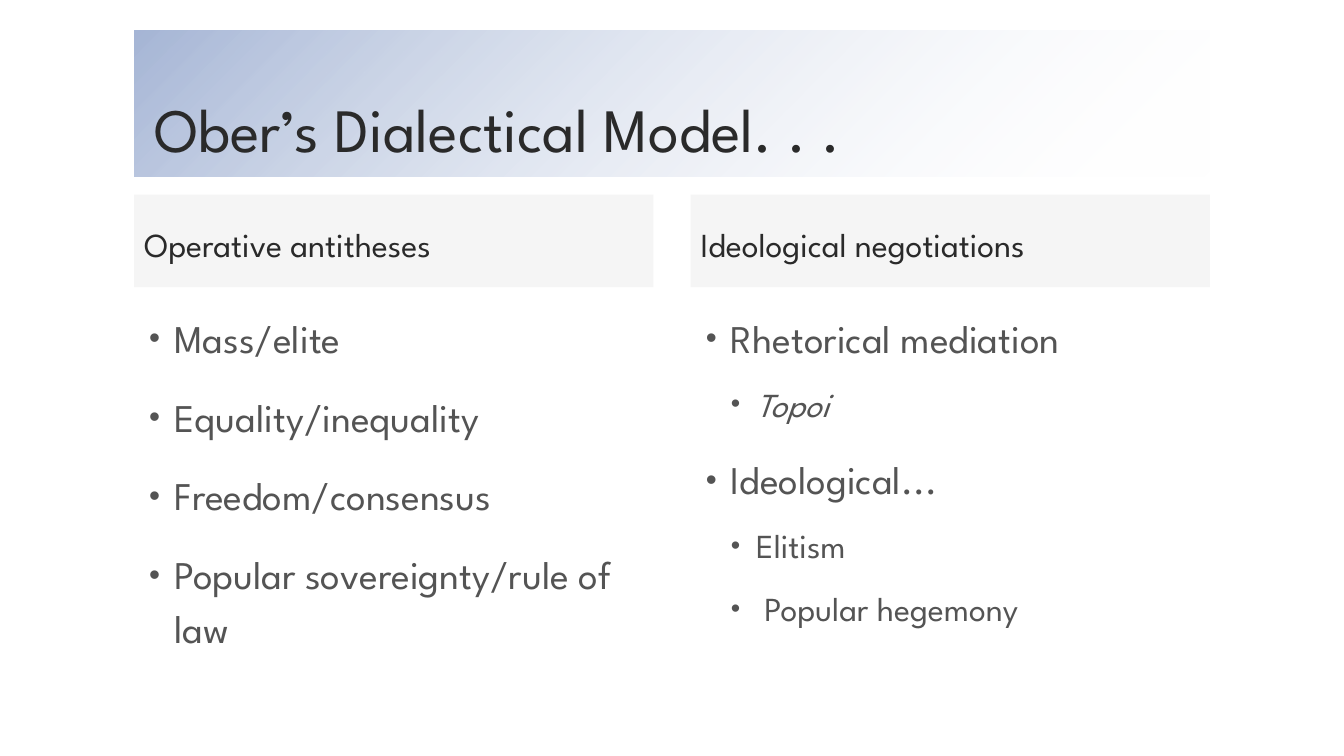
from dataclasses import dataclass

from lxml import etree
from pptx import Presentation
from pptx.dml.color import RGBColor
from pptx.enum.text import MSO_ANCHOR, MSO_AUTO_SIZE, PP_ALIGN
from pptx.oxml.ns import qn
from pptx.util import Inches, Pt

LEFT = PP_ALIGN.LEFT
TOP, MIDDLE, BOTTOM = MSO_ANCHOR.TOP, MSO_ANCHOR.MIDDLE, MSO_ANCHOR.BOTTOM
NO_AUTOFIT = MSO_AUTO_SIZE.NONE
COMPARISON_LAYOUT = 4


@dataclass(frozen=True)
class Theme:
    font: str = "League Spartan"
    heading: str = "2A2A2A"
    body: str = "545454"
    band_start: str = "A6B6D6"
    band_end: str = "FFFFFF"
    panel: str = "BFBFBF"
    panel_opacity: int = 15
    title_size: int = 44
    header_size: int = 24
    list_sizes: tuple = (28, 24)
    list_spacing: tuple = (18, 12)
    list_indents: tuple = (0.3, 0.55)
    hanging: float = 0.25
    line_spacing: float = 1.14
    title_line_spacing: float = 0.9


class Grid:
    """Two equal columns and three rows, in inches."""
    left, column_width, gutter = 1.33, 5.15, 0.37
    rows = {"title": (0.3, 1.45), "header": (1.93, 0.92), "list": (3, 3.58)}

    def box(self, row, column=0, span=1):
        top, height = self.rows[row]
        step = self.column_width + self.gutter
        left = self.left + column * step
        width = span * step - self.gutter
        return dict(zip(("left", "top", "width", "height"),
                        map(Inches, (left, top, width, height))))


def apply(target, values):
    for name, value in values.items():
        setattr(target, name, value)


def set_opacity(color_element, percent):
    alpha = etree.SubElement(color_element, qn("a:alpha"))
    alpha.set("val", str(percent * 1000))


class ComparisonSlide:
    def __init__(self, presentation, theme, grid):
        layout = presentation.slide_layouts[COMPARISON_LAYOUT]
        self.slide = presentation.slides.add_slide(layout)
        self.theme, self.grid = theme, grid

    def place(self, index, box, anchor):
        shape = self.slide.placeholders[index]
        apply(shape, box)
        apply(shape.text_frame, {"word_wrap": True, "auto_size": NO_AUTOFIT,
                                 "vertical_anchor": anchor})
        return shape

    def add_text(self, paragraph, text, size, color, line_spacing,
                 space_before=0, italic=False):
        apply(paragraph, {"alignment": LEFT, "line_spacing": line_spacing,
                          "space_before": Pt(space_before), "space_after": Pt(0)})
        run = paragraph.add_run()
        run.text = text
        apply(run.font, {"name": self.theme.font, "size": Pt(size),
                         "bold": False, "italic": italic})
        run.font.color.rgb = RGBColor.from_string(color)

    def add_bullet(self, paragraph, level):
        theme = self.theme
        properties = paragraph._p.get_or_add_pPr()
        properties.set("marL", str(Inches(theme.list_indents[level])))
        properties.set("indent", str(-Inches(theme.hanging)))
        color = etree.SubElement(properties, qn("a:buClr"))
        for parent, tag, name, value in (
            (color, "a:srgbClr", "val", theme.body),
            (properties, "a:buSzPct", "val", "80000"),
            (properties, "a:buFont", "typeface", "Arial"),
            (properties, "a:buChar", "char", "•"),
        ):
            etree.SubElement(parent, qn(tag)).set(name, value)

    def title(self, text):
        theme = self.theme
        shape = self.place(0, self.grid.box("title", span=2), BOTTOM)
        apply(shape.text_frame, {
            "margin_left": Inches(0.2), "margin_right": Inches(0.2),
            "margin_top": Inches(0.1), "margin_bottom": Inches(0.1)})
        shape.fill.gradient()
        shape.fill.gradient_angle = 315  # counter-clockwise: falls to the lower right
        for stop, color, position in zip(shape.fill.gradient_stops,
                                         (theme.band_start, theme.band_end), (0, 1)):
            stop.color.rgb = RGBColor.from_string(color)
            stop.position = position
        set_opacity(shape.element.xpath("./p:spPr//a:srgbClr")[-1], 0)
        self.add_text(shape.text_frame.paragraphs[0], text, theme.title_size,
                      theme.heading, theme.title_line_spacing)

    def header(self, column, text):
        theme = self.theme
        shape = self.place(1 + 2 * column, self.grid.box("header", column), MIDDLE)
        shape.fill.solid()
        shape.fill.fore_color.rgb = RGBColor.from_string(theme.panel)
        set_opacity(shape.element.xpath("./p:spPr//a:srgbClr")[0], theme.panel_opacity)
        self.add_text(shape.text_frame.paragraphs[0], text, theme.header_size,
                      theme.heading, theme.line_spacing)

    def bullets(self, column, items):
        theme = self.theme
        shape = self.place(2 + 2 * column, self.grid.box("list", column), TOP)
        frame = shape.text_frame
        for number, (text, level, italic) in enumerate(items):
            paragraph = frame.add_paragraph() if number else frame.paragraphs[0]
            paragraph.level = level
            self.add_text(paragraph, text, theme.list_sizes[level], theme.body,
                          theme.line_spacing, theme.list_spacing[level], italic)
            self.add_bullet(paragraph, level)


# Content: header, then (text, level, italic) for each list item
COLUMNS = (
    ("Operative antitheses", (
        ("Mass/elite", 0, False),
        ("Equality/inequality", 0, False),
        ("Freedom/consensus", 0, False),
        ("Popular sovereignty/rule of law", 0, False),
    )),
    ("Ideological negotiations", (
        ("Rhetorical mediation", 0, False),
        ("Topoi", 1, True),
        ("Ideological...", 0, False),
        ("Elitism", 1, False),
        (" Popular hegemony", 1, False),
    )),
)


def main():
    presentation = Presentation()
    apply(presentation, {"slide_width": Inches(13.33), "slide_height": Inches(7.5)})
    comparison = ComparisonSlide(presentation, Theme(), Grid())

    # Title band
    comparison.title("Ober’s Dialectical Model. . .")

    # Two columns, each a header panel over a list
    for column, (heading, items) in enumerate(COLUMNS):
        comparison.header(column, heading)
        comparison.bullets(column, items)

    presentation.save("out.pptx")


if __name__ == "__main__":
    main()
